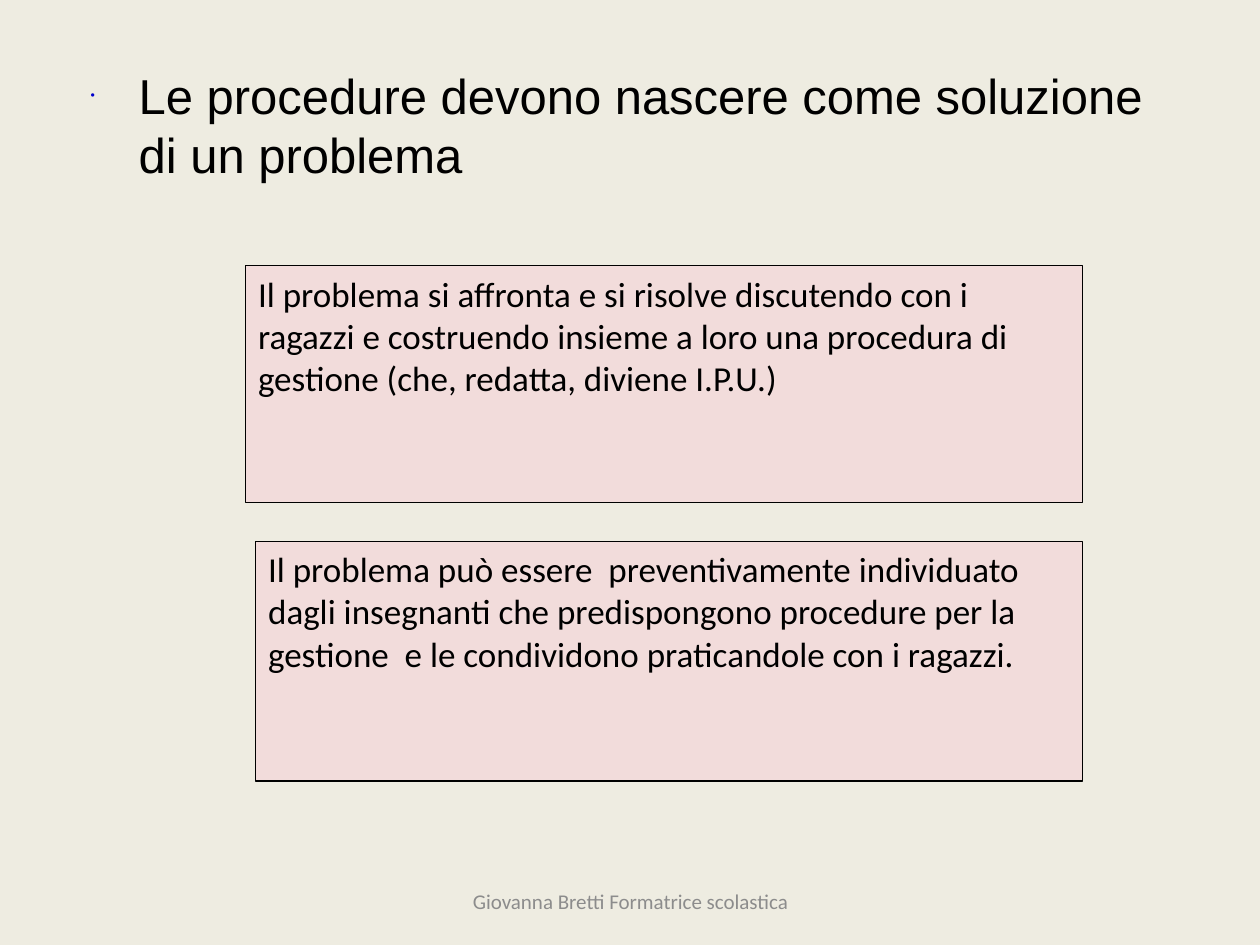
"""Build a slide on how classroom procedures grow out of problems."""
from dataclasses import dataclass

from lxml import etree
from pptx import Presentation
from pptx import util as u
from pptx.dml.color import RGBColor
from pptx.enum import shapes, text
from pptx.oxml.ns import qn


@dataclass(frozen=True)
class Theme:
    """Colours, fonts and type sizes."""
    background: str = "EEECE1"
    panel: str = "F2DCDB"
    ink: str = "000000"
    muted: str = "8C8C8C"
    bullet: str = "0000CC"
    heading_font: str = "Arial"
    body_font: str = "Calibri"
    heading_size: float = 28
    body_size: float = 20
    footer_size: float = 12
    outline: float = 0.75


@dataclass(frozen=True)
class Area:
    """Position and size in inches."""
    left: float
    top: float
    width: float
    height: float

    def lengths(self) -> tuple:
        """Return the four measures as lengths."""
        return tuple(u.Inches(n) for n in (self.left, self.top, self.width, self.height))


@dataclass(frozen=True)
class Panel:
    """A filled box and its paragraphs."""
    area: Area
    lines: tuple[str, ...]


THEME = Theme()
HEADING = "Le procedure devono nascere come soluzione di un problema"
FOOTER = "Giovanna Bretti Formatrice scolastica"
PANELS = (
    Panel(Area(1.95, 2.11, 6.64, 1.88), (
        "Il problema si affronta e si risolve discutendo con i ragazzi e costruendo "
        "insieme a loro una procedura di gestione (che, redatta, diviene I.P.U.)",
    )),
    Panel(Area(2.03, 4.3, 6.56, 1.9), (
        "Il problema può essere  preventivamente individuato",
        "dagli insegnanti che predispongono procedure per la gestione  e le condividono "
        "praticandole con i ragazzi.",
    )),
)


def rgb(value: str) -> RGBColor:
    """Turn a hex value into a colour."""
    return RGBColor.from_string(value)


def write(box, *lines: str, size: float = THEME.body_size, font: str = THEME.body_font,
          color: str = THEME.ink, align=text.PP_ALIGN.LEFT,
          anchor=text.MSO_ANCHOR.TOP) -> None:
    """Fill a box with one formatted paragraph per line."""
    frame = box.text_frame
    frame.word_wrap = True
    frame.auto_size = text.MSO_AUTO_SIZE.NONE
    frame.vertical_anchor = anchor
    for index, line in enumerate(lines):
        para = frame.add_paragraph() if index else frame.paragraphs[0]
        para.alignment = align
        span = para.add_run()
        span.text = line
        span.font.size = u.Pt(size)
        span.font.name = font
        span.font.color.rgb = rgb(color)


def add_bullet(para, color: str, percent: int, indent: float) -> None:
    """Give a paragraph a coloured bullet with a hanging indent."""
    props = para._p.get_or_add_pPr()
    props.set("marL", str(u.Inches(indent)))
    props.set("indent", str(-u.Inches(indent)))
    tint = etree.SubElement(props, qn("a:buClr"))
    etree.SubElement(tint, qn("a:srgbClr"), val=color)
    etree.SubElement(props, qn("a:buSzPct"), val=str(percent * 1000))
    etree.SubElement(props, qn("a:buFont"), typeface=THEME.heading_font)
    etree.SubElement(props, qn("a:buChar"), char="•")


def draw_heading(page) -> None:
    """Place the bulleted heading in the title placeholder."""
    title = page.shapes.title
    title.left, title.top, title.width, title.height = Area(0.62, 0.47, 8.75, 1.48).lengths()
    write(title, HEADING, size=THEME.heading_size, font=THEME.heading_font)
    para = title.text_frame.paragraphs[0]
    para.space_before = u.Pt(THEME.heading_size * 0.2)
    add_bullet(para, THEME.bullet, percent=25, indent=0.38)


def draw_panel(page, panel: Panel) -> None:
    """Draw an outlined box with its text."""
    box = page.shapes.add_shape(shapes.MSO_SHAPE.RECTANGLE, *panel.area.lengths())
    box.shadow.inherit = False
    box.fill.solid()
    box.fill.fore_color.rgb = rgb(THEME.panel)
    box.line.color.rgb = rgb(THEME.ink)
    box.line.width = u.Pt(THEME.outline)
    write(box, *panel.lines)


def main() -> None:
    """Build and save the deck."""
    deck = Presentation()
    deck.slide_width, deck.slide_height = u.Inches(10), u.Inches(7.5)
    page = deck.slides.add_slide(deck.slide_layouts.get_by_name("Title Only"))
    page.background.fill.solid()
    page.background.fill.fore_color.rgb = rgb(THEME.background)
    draw_heading(page)
    for panel in PANELS:
        draw_panel(page, panel)
    footer = page.shapes.add_textbox(*Area(3.42, 6.95, 3.17, 0.4).lengths())
    write(footer, FOOTER, size=THEME.footer_size, color=THEME.muted,
          align=text.PP_ALIGN.CENTER, anchor=text.MSO_ANCHOR.MIDDLE)
    deck.save("out.pptx")


if __name__ == "__main__":
    main()
